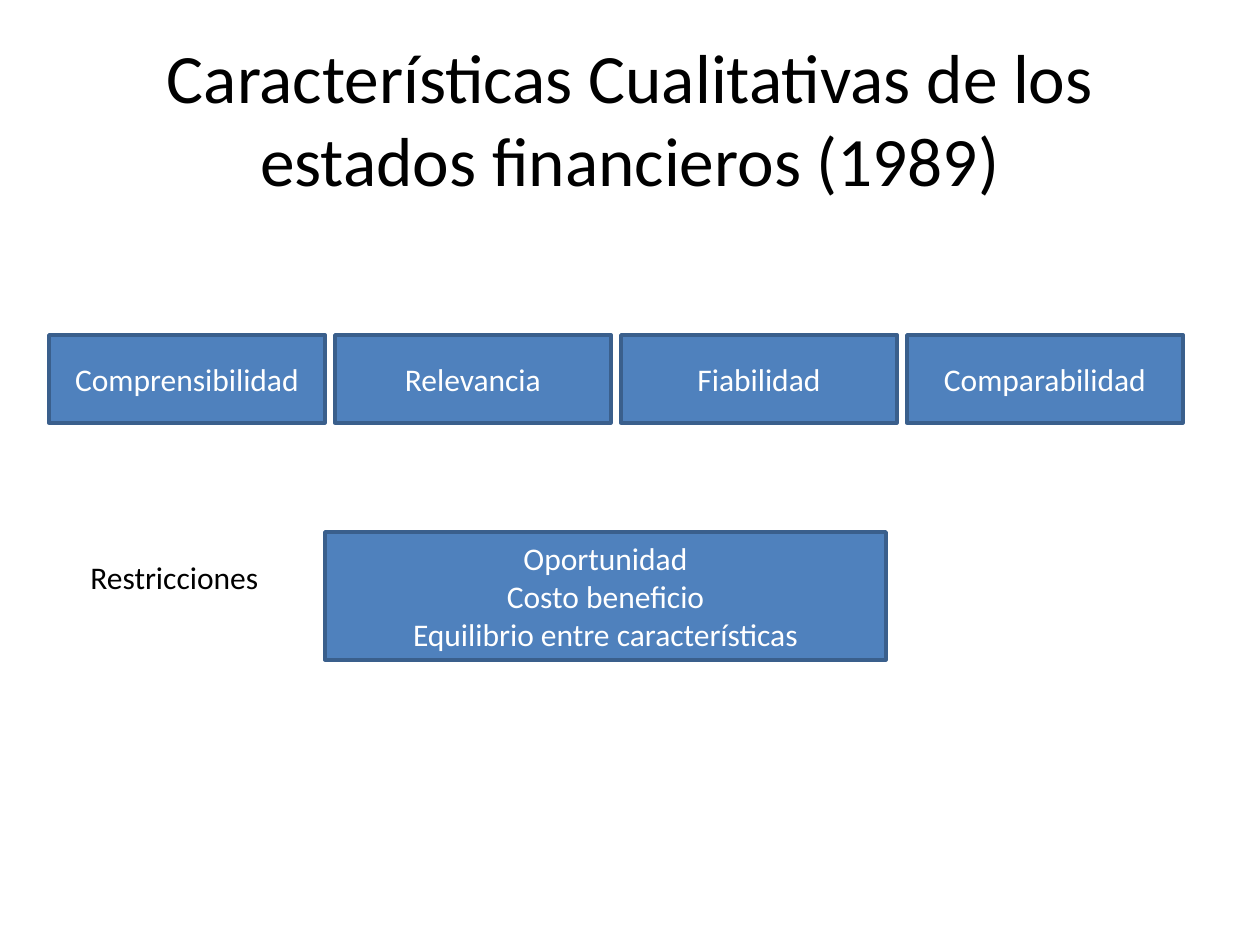
from pptx import Presentation
from pptx import util as u
from pptx.dml.color import RGBColor
from pptx.enum import shapes, text

PX = u.Inches(1) / 126
FONT = "Calibri"
BLACK = RGBColor(0x00, 0x00, 0x00)
WHITE = RGBColor(0xFF, 0xFF, 0xFF)
BLUE = RGBColor(0x4F, 0x81, 0xBD)
DARK_BLUE = RGBColor(0x3A, 0x5F, 0x8C)

CHARACTERISTICS = ["Comprensibilidad", "Relevancia", "Fiabilidad", "Comparabilidad"]
RESTRICTIONS = ["Oportunidad", "Costo beneficio", "Equilibrio entre características"]
FIRST_LEFT, STEP = 49, 286


def px(*lengths):
    return [u.Emu(round(length * PX)) for length in lengths]


def write(frame, lines, size, color, align):
    """Fill a text frame with one paragraph per line."""
    frame.word_wrap = True
    frame.text = "\n".join(lines)
    for paragraph in frame.paragraphs:
        paragraph.alignment = align
        paragraph.font.name = FONT
        paragraph.font.size = u.Pt(size)
        paragraph.font.color.rgb = color


def set_title(slide, wording):
    title = slide.shapes.title
    title.left, title.top, title.width, title.height = px(63, 38, 1134, 158)
    frame = title.text_frame
    write(frame, [wording], 39.6, BLACK, text.PP_ALIGN.CENTER)
    frame.auto_size = text.MSO_AUTO_SIZE.NONE
    frame.vertical_anchor = text.MSO_ANCHOR.MIDDLE


def add_box(slide, bounds, lines):
    box = slide.shapes.add_shape(shapes.MSO_SHAPE.RECTANGLE, *px(*bounds))
    box.shadow.inherit = False
    box.fill.solid()
    box.fill.fore_color.rgb = BLUE
    box.line.color.rgb = DARK_BLUE
    box.line.width = u.Pt(2)
    box.text_frame.vertical_anchor = text.MSO_ANCHOR.MIDDLE
    write(box.text_frame, lines, 18, WHITE, text.PP_ALIGN.CENTER)


def add_label(slide, bounds, wording):
    label = slide.shapes.add_textbox(*px(*bounds))
    write(label.text_frame, [wording], 18, BLACK, text.PP_ALIGN.LEFT)
    label.text_frame.auto_size = text.MSO_AUTO_SIZE.SHAPE_TO_FIT_TEXT


def main():
    deck = Presentation()
    deck.slide_width, deck.slide_height = px(1260, 945)
    slide = deck.slides.add_slide(deck.slide_layouts[5])
    set_title(slide, "Características Cualitativas de los estados financieros (1989)")
    for column, characteristic in enumerate(CHARACTERISTICS):
        add_box(slide, (FIRST_LEFT + column * STEP, 335, 276, 88), [characteristic])
    add_box(slide, (325, 532, 561, 128), RESTRICTIONS)
    add_label(slide, (78, 552, 197, 50), "Restricciones")
    deck.save("out.pptx")


if __name__ == "__main__":
    main()
